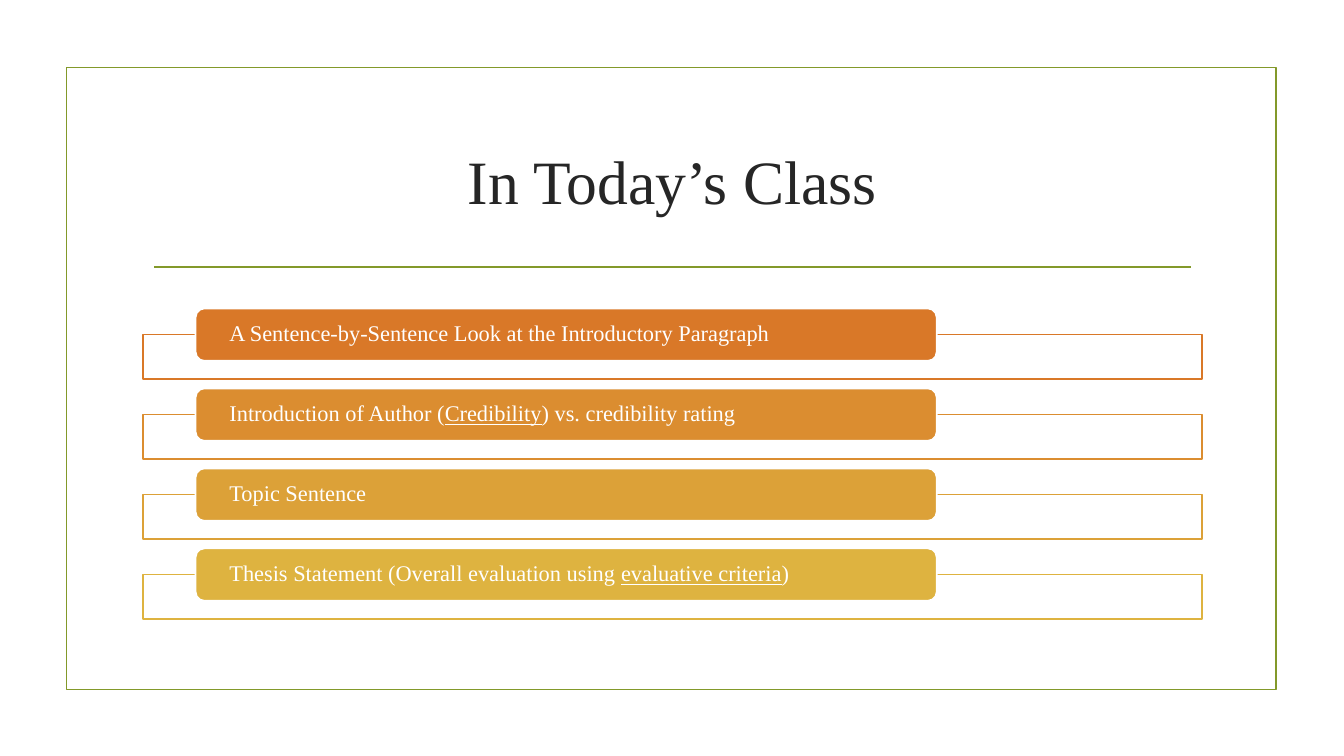
from pptx import Presentation
from pptx.dml.color import RGBColor
from pptx.enum.shapes import MSO_CONNECTOR as CONN, MSO_SHAPE as SHAPE
from pptx.enum.text import MSO_ANCHOR as ANCHOR, PP_ALIGN as ALIGN
from pptx.oxml.ns import qn
from pptx.util import Inches, Pt
from lxml.etree import SubElement


def rgb(value):
    return RGBColor.from_string(value)


class Deck:
    font = "Times New Roman"
    green = "83992A"
    ink = "262626"
    white = "FFFFFF"
    line_width = 1.25

    def __init__(self, prs):
        self.s = prs.slides.add_slide(prs.slide_layouts[6])

    def outline(self, line, color):
        line.color.rgb = rgb(color)
        line.width = Pt(self.line_width)

    def box(self, kind, x, y, w, h, line, fill=None):
        sp = self.s.shapes.add_shape(kind, Inches(x), Inches(y), Inches(w), Inches(h))
        sp.shadow.inherit = False
        if fill:
            sp.fill.solid()
            sp.fill.fore_color.rgb = rgb(fill)
        else:
            sp.fill.background()
        self.outline(sp.line, line)
        return sp

    def rule(self, x1, x2, y):
        sp = self.s.shapes.add_connector(CONN.STRAIGHT, Inches(x1), Inches(y), Inches(x2), Inches(y))
        self.outline(sp.line, self.green)
        SubElement(sp._element.spPr, qn("a:effectLst"))

    def add_text(self, sp, runs, size, color, align):
        tf = sp.text_frame
        tf.word_wrap = True
        tf.vertical_anchor = ANCHOR.MIDDLE
        p = tf.paragraphs[0]
        p.alignment = align
        for text, underline in runs:
            r = p.add_run()
            r.text = text
            r.font.name = self.font
            r.font.size = Pt(size)
            r.font.color.rgb = rgb(color)
            if underline:
                r.font.underline = True
        return tf

    def title(self, text, x, y, w, h):
        sp = self.s.shapes.add_textbox(Inches(x), Inches(y), Inches(w), Inches(h))
        self.add_text(sp, [(text, False)], 44, self.ink, ALIGN.CENTER)

    def topic(self, y, color, runs):
        self.box(SHAPE.RECTANGLE, 1.42, y, 10.5, 0.44, color, self.white)
        sp = self.box(SHAPE.ROUNDED_RECTANGLE, 1.94, y - 0.26, 7.35, 0.52, self.white, color)
        tf = self.add_text(sp, runs, 16, self.white, ALIGN.LEFT)
        tf.margin_left = tf.margin_right = Inches(0.31)
        tf.margin_top = tf.margin_bottom = 0
        tf.paragraphs[0].line_spacing = 0.9


TOPICS = [
    ("D97828", [("A Sentence-by-Sentence Look at the Introductory Paragraph", False)]),
    ("DB8D30", [("Introduction of Author (", False), ("Credibility", True),
                (") vs. credibility rating", False)]),
    ("DCA138", [("Topic Sentence", False)]),
    ("DEB340", [("Thesis Statement (Overall evaluation using ", False),
                ("evaluative criteria", True), (")", False)]),
]
FIRST_TOP, LAST_TOP = 3.32, 5.7


def main():
    prs = Presentation()
    prs.slide_width, prs.slide_height = Inches(13.33), Inches(7.5)
    deck = Deck(prs)
    deck.box(SHAPE.RECTANGLE, 0.66, 0.67, 12, 6.17, deck.green)
    deck.rule(1.53, 11.81, 2.65)
    deck.title("In Today’s Class", 1.42, 1.07, 10.5, 1.43)
    pitch = (LAST_TOP - FIRST_TOP) / (len(TOPICS) - 1)
    for i, (color, runs) in enumerate(TOPICS):
        deck.topic(FIRST_TOP + i * pitch, color, runs)
    prs.save("out.pptx")


if __name__ == "__main__":
    main()
